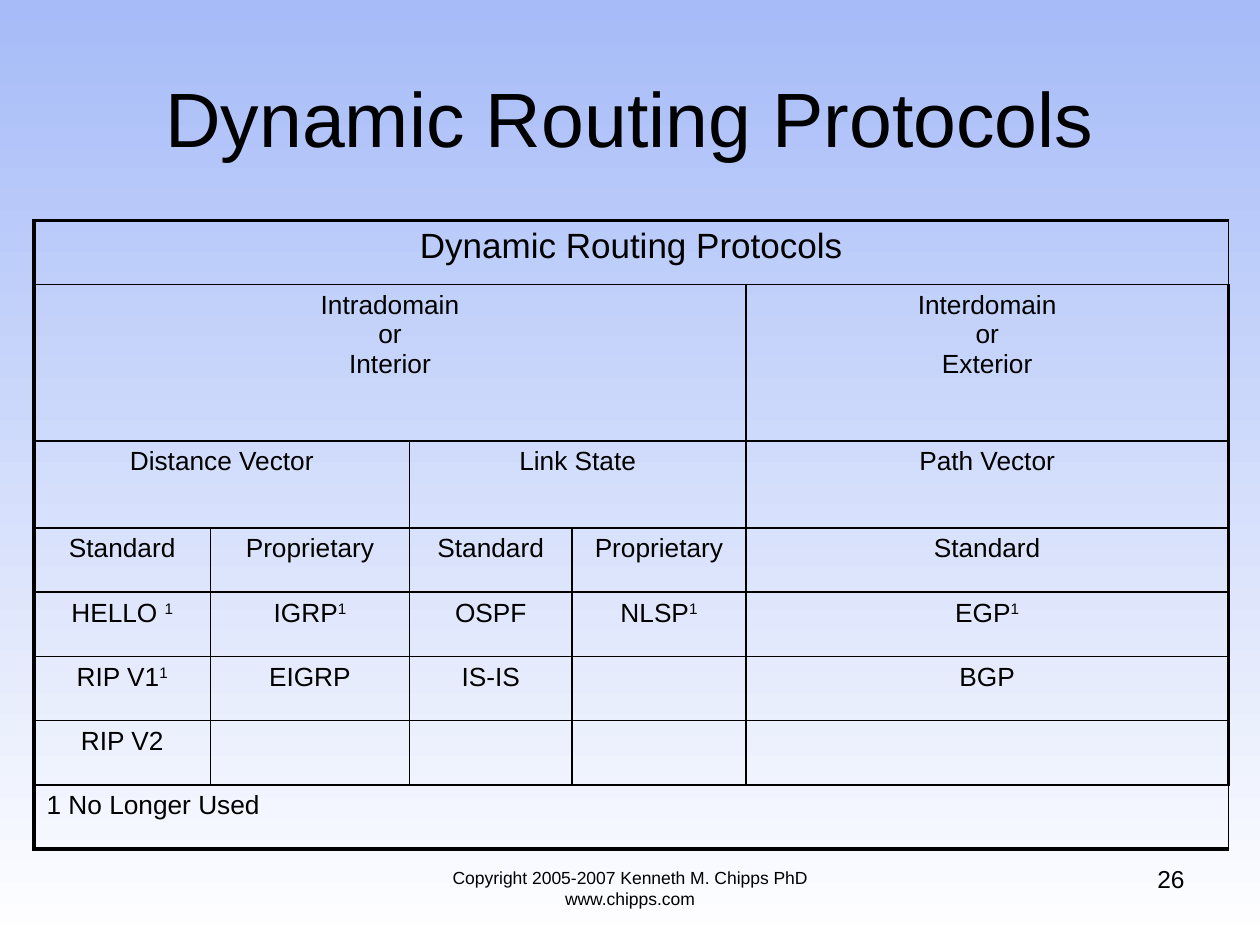
from dataclasses import dataclass

from lxml import etree
from pptx import Presentation
from pptx.dml.color import RGBColor
from pptx.enum.text import MSO_ANCHOR, PP_ALIGN
from pptx.oxml.ns import qn
from pptx.util import Inches, Length, Pt

LEFT, CENTER, RIGHT = PP_ALIGN.LEFT, PP_ALIGN.CENTER, PP_ALIGN.RIGHT
TOP, MIDDLE = MSO_ANCHOR.TOP, MSO_ANCHOR.MIDDLE

COLOURS = {"sky": "A6BBF8", "white": "FFFFFF", "ink": "000000"}
FONT = "Arial"
SLIDE_WIDTH, SLIDE_HEIGHT = Inches(10), Inches(7.5)
GRID_COLUMNS, GRID_ROWS = 100, 75
OUTER_LINE, INNER_LINE = 2.25, 1
SUPERSCRIPT_MARK = "^"


@dataclass(frozen=True)
class Label:
    """Text in a box placed in grid columns and rows."""
    text: str
    left: float
    top: float
    width: float
    height: float
    size: float
    align: PP_ALIGN
    anchor: MSO_ANCHOR = TOP


@dataclass(frozen=True)
class Entry:
    """Text of one table cell; a caret comes before a superscript."""
    text: str = ""
    span: int = 1
    size: float = 15
    align: PP_ALIGN = CENTER


LABELS = [
    Label("Dynamic Routing Protocols", 5, 3, 90, 12.5, 44, CENTER, MIDDLE),
    Label("Copyright 2005-2007 Kenneth M. Chipps PhD www.chipps.com",
          30, 68.3, 40, 5.2, 10, CENTER),
    Label("26", 71.7, 68.1, 23.3, 5.2, 14, RIGHT),
]

TABLE_LEFT, TABLE_TOP = 2.7, 17.5
COLUMN_WIDTHS = [14, 15.8, 12.9, 13.8, 38.3]
ROW_HEIGHTS = [5.1, 12.4, 6.9] + [5.1] * 5
PROTOCOLS = [
    ["Standard", "Proprietary", "Standard", "Proprietary", "Standard"],
    ["HELLO ^1", "IGRP^1", "OSPF", "NLSP^1", "EGP^1"],
    ["RIP V1^1", "EIGRP", "IS-IS", "", "BGP"],
    ["RIP V2", "", "", "", ""],
]
ENTRIES = [
    [Entry("Dynamic Routing Protocols", span=5, size=20)],
    [Entry("Intradomain\vor\vInterior", span=4),
     Entry("Interdomain\vor\vExterior")],
    [Entry("Distance Vector", span=2), Entry("Link State", span=2),
     Entry("Path Vector")],
    *[[Entry(name) for name in names] for names in PROTOCOLS],
    [Entry("1 No Longer Used", span=5, align=LEFT)],
]


def across(columns: float) -> Length:
    return Length(round(SLIDE_WIDTH * columns / GRID_COLUMNS))


def down(rows: float) -> Length:
    return Length(round(SLIDE_HEIGHT * rows / GRID_ROWS))


def colour(name: str) -> RGBColor:
    return RGBColor.from_string(COLOURS[name])


def write(frame, text: str, size: float, align: PP_ALIGN) -> None:
    body, _, superscript = text.partition(SUPERSCRIPT_MARK)
    para = frame.paragraphs[0]
    para.text = body
    para.alignment = align
    if superscript:
        span = para.add_run()
        span.text = superscript
        span.font._element.set("baseline", "30000")
    para.font.size = Pt(size)
    for span in para.runs:
        span.font.name = FONT
        span.font.size = Pt(size)
        span.font.color.rgb = colour("ink")


def add_label(page, label: Label) -> None:
    box = page.shapes.add_textbox(across(label.left), down(label.top),
                                  across(label.width), down(label.height))
    box.text_frame.word_wrap = True
    box.text_frame.vertical_anchor = label.anchor
    write(box.text_frame, label.text, label.size, label.align)


def add_borders(cell, row: int, column: int) -> None:
    """Draw heavy lines on the table's edge and thin ones inside."""
    on_edge = {
        "a:lnL": column == 0,
        "a:lnR": column == len(COLUMN_WIDTHS) - 1,
        "a:lnT": row == 0,
        "a:lnB": row == len(ROW_HEIGHTS) - 1,
    }
    properties = cell._tc.get_or_add_tcPr()
    for tag, is_edge in on_edge.items():
        weight = Pt(OUTER_LINE if is_edge else INNER_LINE)
        line = etree.SubElement(properties, qn(tag), w=str(int(weight)))
        fill = etree.SubElement(line, qn("a:solidFill"))
        etree.SubElement(fill, qn("a:srgbClr"), val=COLOURS["ink"])


def add_protocol_table(page) -> None:
    table = page.shapes.add_table(
        len(ROW_HEIGHTS), len(COLUMN_WIDTHS), across(TABLE_LEFT),
        down(TABLE_TOP), across(sum(COLUMN_WIDTHS)), down(sum(ROW_HEIGHTS)),
    ).table
    table.first_row = table.horz_banding = False
    for column, width in zip(table.columns, COLUMN_WIDTHS):
        column.width = across(width)
    for row, height in zip(table.rows, ROW_HEIGHTS):
        row.height = down(height)

    for row in range(len(ROW_HEIGHTS)):
        for column in range(len(COLUMN_WIDTHS)):
            cell = table.cell(row, column)
            add_borders(cell, row, column)
            cell.fill.background()

    for row, entries in enumerate(ENTRIES):
        column = 0
        for entry in entries:
            cell = table.cell(row, column)
            if entry.span > 1:
                cell.merge(table.cell(row, column + entry.span - 1))
            write(cell.text_frame, entry.text, entry.size, entry.align)
            column += entry.span


def paint_background(page) -> None:
    fill = page.background.fill
    fill.gradient()
    fill.gradient_angle = 270
    for stop, name, position in zip(fill.gradient_stops, ("sky", "white"), (0, 1)):
        stop.color.rgb = colour(name)
        stop.position = position


def main() -> None:
    deck = Presentation()
    deck.slide_width, deck.slide_height = SLIDE_WIDTH, SLIDE_HEIGHT
    page = deck.slides.add_slide(deck.slide_layouts[6])
    paint_background(page)
    for label in LABELS:
        add_label(page, label)
    add_protocol_table(page)
    deck.save("out.pptx")


if __name__ == "__main__":
    main()
